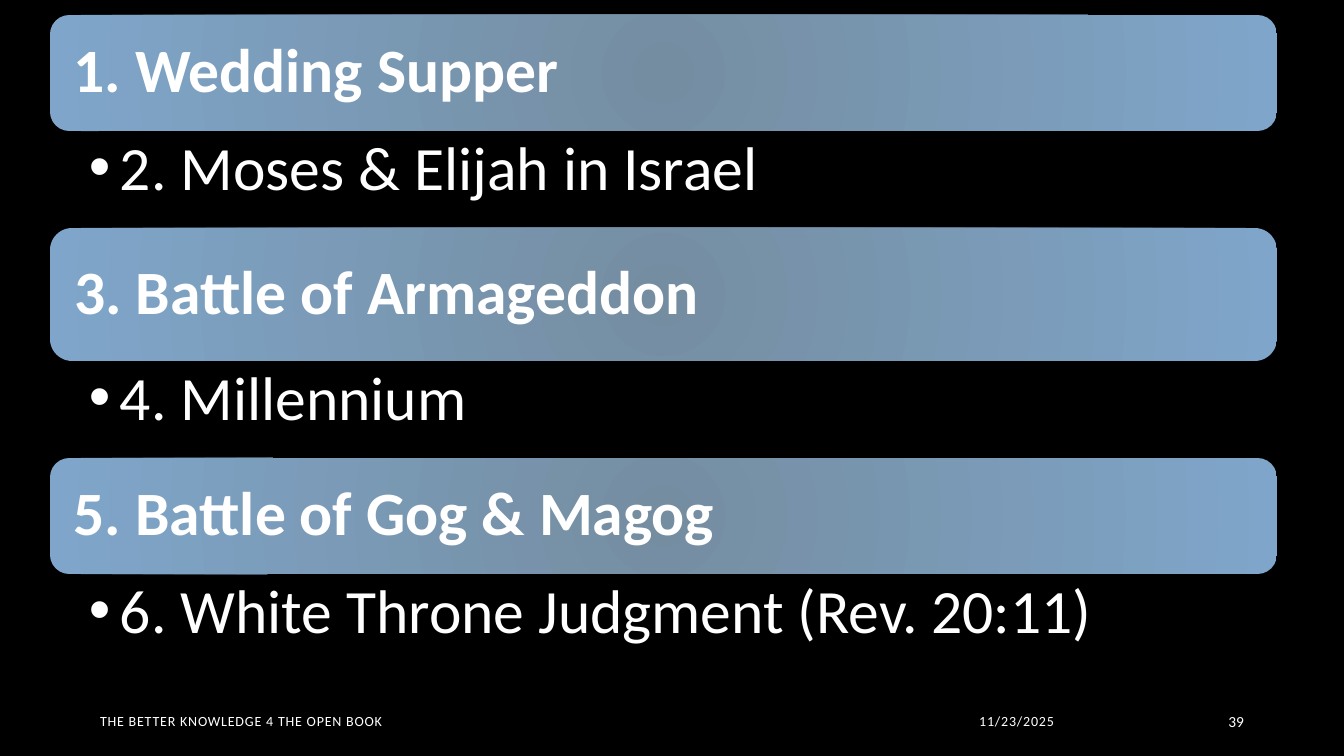
from lxml.etree import SubElement
from pptx import Presentation
from pptx.dml.color import RGBColor
from pptx.enum.shapes import MSO_SHAPE
from pptx.enum.text import MSO_ANCHOR, PP_ALIGN
from pptx.oxml.ns import qn
from pptx.util import Pt

SCALE = 914400 / 100.8


def px(n):
    return round(n * SCALE)


def rgb(color):
    return RGBColor.from_string(color)


class Deck:
    """Builds one slide in a shared style."""

    font = "Calibri"
    white = "FFFFFF"
    gradient = ("758DA1", "7FA6CA")

    def __init__(self, width, height, background):
        self.prs = Presentation()
        self.prs.slide_width, self.prs.slide_height = px(width), px(height)
        self.s = self.prs.slides.add_slide(self.prs.slide_layouts[6])
        self.s.background.fill.solid()
        self.s.background.fill.fore_color.rgb = rgb(background)

    def label(self, sp, text, size, insets=(10, 5, 10, 5), anchor=MSO_ANCHOR.MIDDLE,
              align=PP_ALIGN.LEFT, spacing=None, bold=False, tracking=0):
        tf = sp.text_frame
        left, top, right, bottom = map(px, insets)
        frame = {"word_wrap": True, "vertical_anchor": anchor, "margin_left": left,
                 "margin_top": top, "margin_right": right, "margin_bottom": bottom}
        p = tf.paragraphs[0]
        r = p.add_run()
        r.text = text
        formats = ((tf, frame),
                   (p, {"alignment": align, "line_spacing": spacing}),
                   (r.font, {"name": self.font, "size": Pt(size), "bold": bold}))
        for target, values in formats:
            for name, value in values.items():
                setattr(target, name, value)
        r.font.color.rgb = rgb(self.white)
        if tracking:
            r._r.get_or_add_rPr().set("spc", str(tracking))
        return p

    def text(self, box, text, size, **style):
        sp = self.s.shapes.add_textbox(*map(px, box))
        return self.label(sp, text, size, **style)

    def band(self, box, text):
        sp = self.s.shapes.add_shape(MSO_SHAPE.ROUNDED_RECTANGLE, *map(px, box))
        sp.shadow.inherit = False
        sp.line.fill.background()
        sp.fill.gradient()
        for stop, color in zip(sp.fill.gradient_stops, self.gradient):
            stop.color.rgb = rgb(color)
        grad = sp._element.spPr.find(qn("a:gradFill"))
        grad.remove(grad.find(qn("a:lin")))
        circle = SubElement(grad, qn("a:path"), {"path": "circle"})
        SubElement(circle, qn("a:fillToRect"), dict.fromkeys("ltrb", "100000"))
        self.label(sp, text, 44, insets=(18, 18, 18, 18), spacing=0.9, bold=True)

    def bullet(self, box, text):
        p = self.text(box, text, 44, insets=(39, 6, 34, 6),
                      anchor=MSO_ANCHOR.TOP, spacing=0.9)
        p.level = 1
        pPr = p._p.get_or_add_pPr()
        pPr.set("marL", str(px(31)))
        pPr.set("indent", str(-px(31)))
        SubElement(pPr, qn("a:buFont"), {"typeface": "Arial"})
        SubElement(pPr, qn("a:buChar"), {"char": "•"})


def main():
    deck = Deck(1344, 756, "000000")
    events = (
        (116, "1. Wedding Supper", "2. Moses & Elijah in Israel"),
        (133, "3. Battle of Armageddon", "4. Millennium"),
        (116, "5. Battle of Gog & Magog", "6. White Throne Judgment (Rev. 20:11)"),
    )
    left, top, width, bullet_height = 50, 15, 1227, 97
    for height, heading, detail in events:
        deck.band((left, top, width, height), heading)
        top += height
        deck.bullet((left, top, width, bullet_height), detail)
        top += bullet_height

    footers = (
        (90, 425, "THE BETTER KNOWLEDGE 4 THE OPEN BOOK", 10, PP_ALIGN.LEFT, 60),
        (840, 224, "11/23/2025", 10, PP_ALIGN.RIGHT, 60),
        (1109, 145, "39", 11, PP_ALIGN.RIGHT, 0),
    )
    for left, width, text, size, align, tracking in footers:
        deck.text((left, 701, width, 40), text, size, align=align, tracking=tracking)
    deck.prs.save("out.pptx")


if __name__ == "__main__":
    main()
